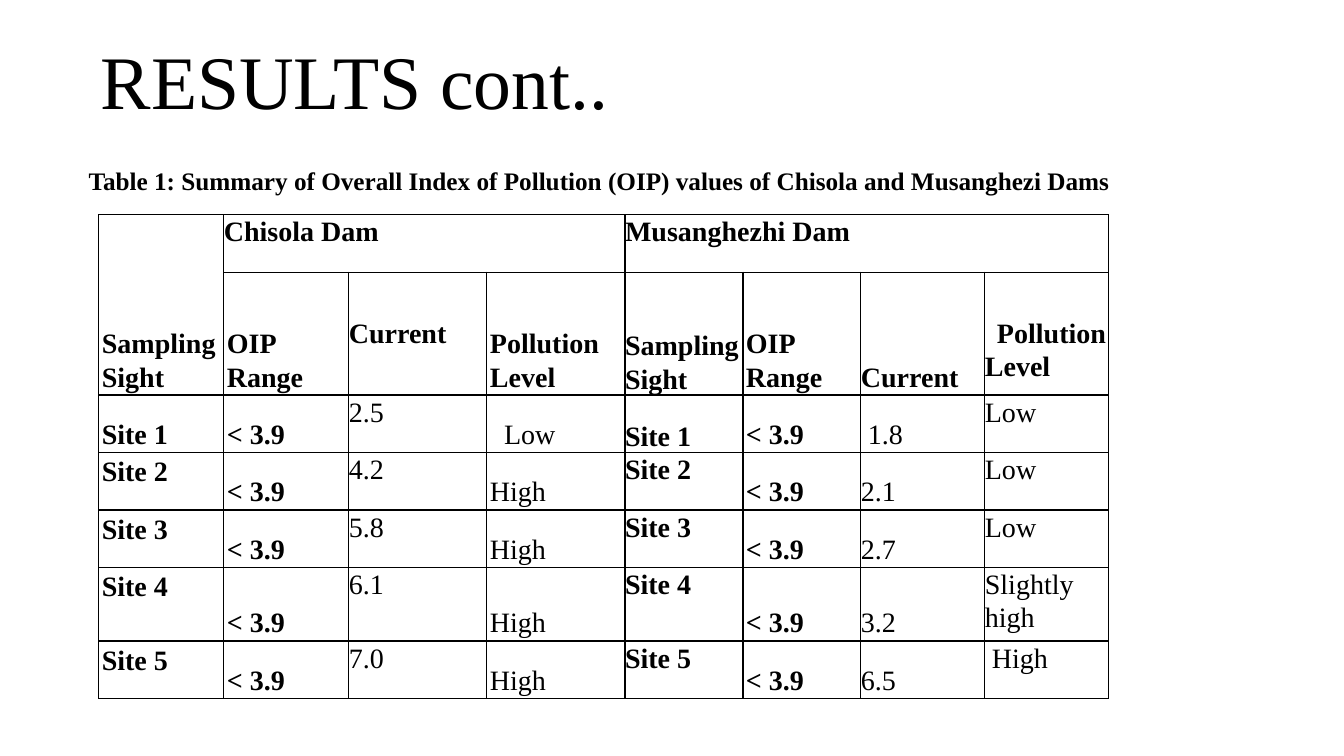
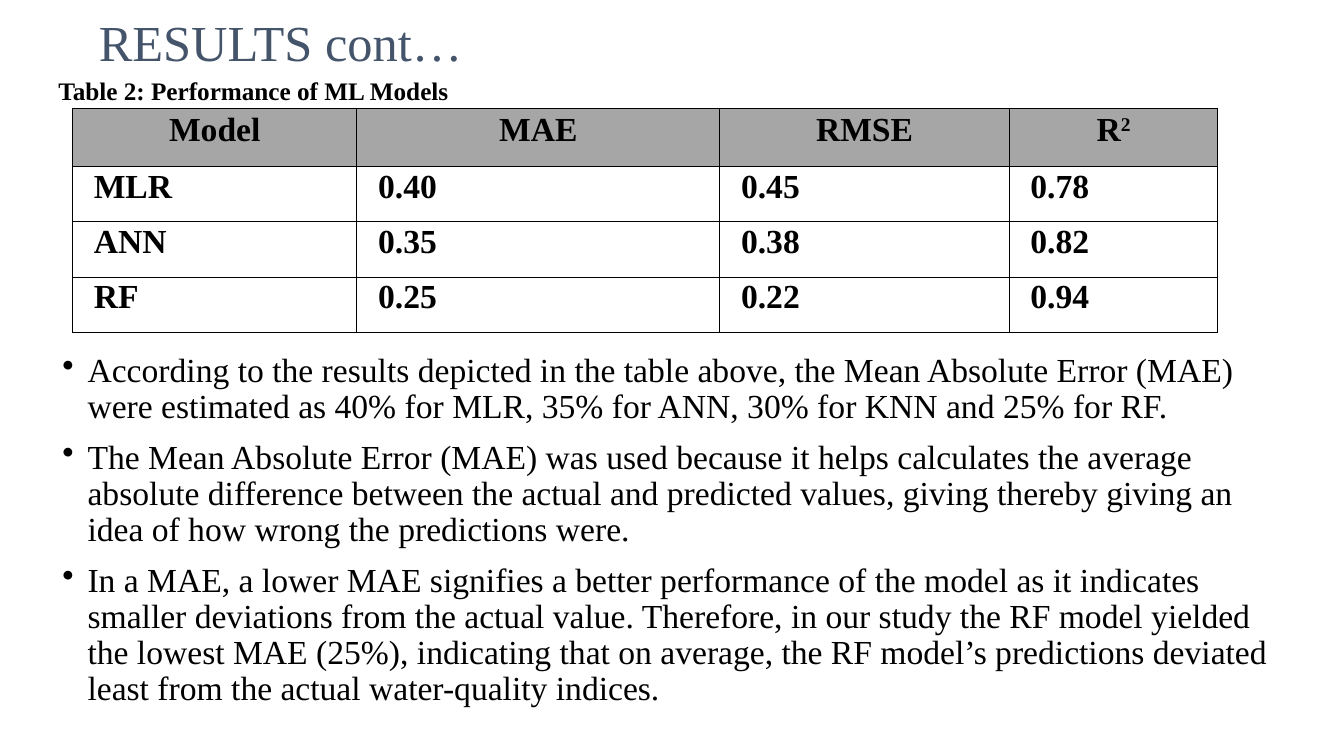
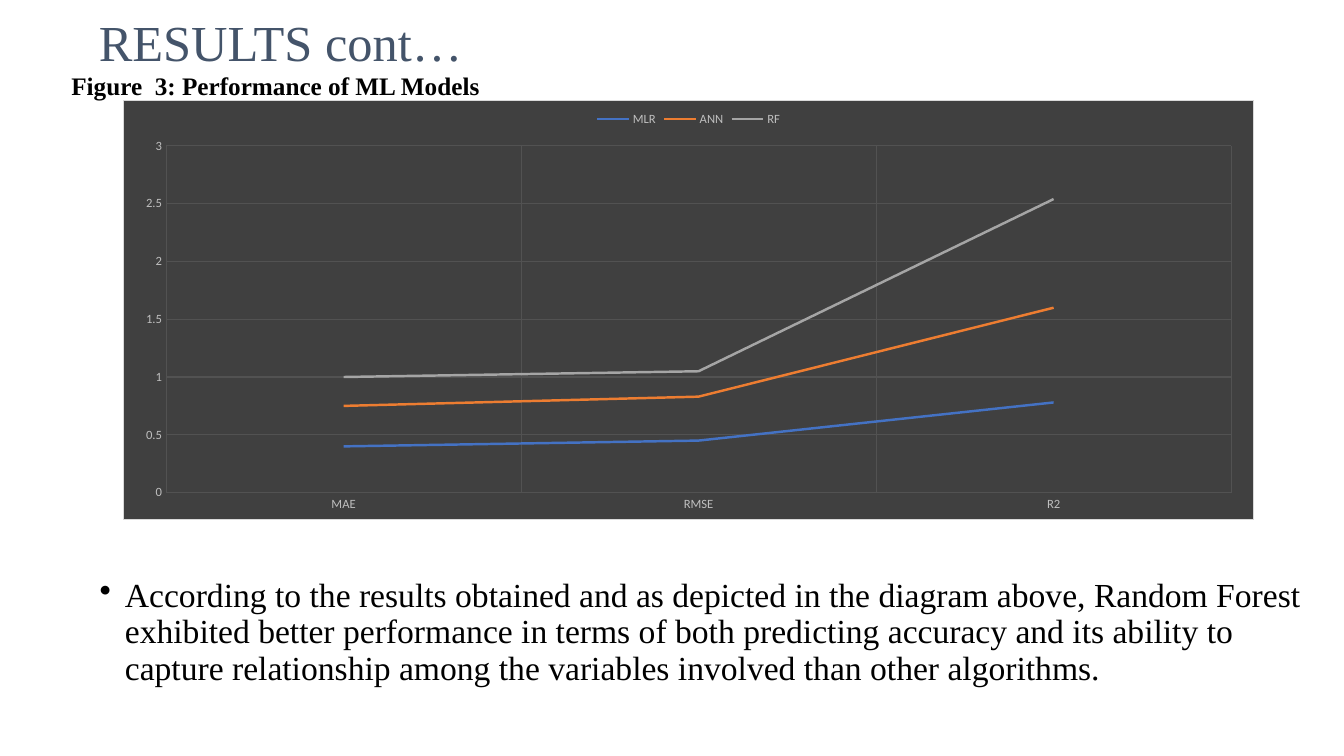
from lxml import etree
from pptx import Presentation
from pptx.chart.data import CategoryChartData
from pptx.dml.color import RGBColor
from pptx.enum.chart import XL_CHART_TYPE, XL_LEGEND_POSITION, XL_TICK_MARK
from pptx.enum.text import MSO_ANCHOR, PP_ALIGN
from pptx.oxml import parse_xml
from pptx.oxml.ns import nsdecls, qn
from pptx.util import Inches, Pt

LEFT, CENTER, JUSTIFY = PP_ALIGN.LEFT, PP_ALIGN.CENTER, PP_ALIGN.JUSTIFY
TOP, MIDDLE, BOTTOM = MSO_ANCHOR.TOP, MSO_ANCHOR.MIDDLE, MSO_ANCHOR.BOTTOM
LINE_STACKED = XL_CHART_TYPE.LINE_STACKED
LEGEND_TOP = XL_LEGEND_POSITION.TOP
NO_TICK = XL_TICK_MARK.NONE

BLACK = RGBColor(0x00, 0x00, 0x00)
SLATE = RGBColor(0x44, 0x54, 0x6A)
HEADER_GREY = RGBColor(0xA6, 0xA6, 0xA6)
CHART_GREY = RGBColor(0x40, 0x40, 0x40)
GRID_GREY = RGBColor(0x52, 0x52, 0x52)
LABEL_GREY = RGBColor(0xBF, 0xBF, 0xBF)
BORDER_GREY = RGBColor(0xD9, 0xD9, 0xD9)
BLUE = RGBColor(0x44, 0x72, 0xC4)
ORANGE = RGBColor(0xED, 0x7D, 0x31)
SILVER = RGBColor(0xA5, 0xA5, 0xA5)
TEXT_FONT = "Times New Roman"
CHART_FONT = "Calibri"


def write(paragraph, text, size, align=LEFT, bold=False, color=BLACK, spacing=1.07, indent=0):
    """Fill and format one paragraph; indent moves its first line, in inches."""
    paragraph.text = text
    paragraph.alignment = align
    paragraph.line_spacing = spacing
    paragraph.font.name = TEXT_FONT
    paragraph.font.size = Pt(size)
    paragraph.font.bold = bold
    paragraph.font.color.rgb = color
    if indent:
        paragraph._p.get_or_add_pPr().set("indent", str(Inches(indent)))


def add_ruled_table(slide, left, top, widths, heights):
    """Add an unfilled table with a 1 pt black line around every cell."""
    frame = slide.shapes.add_table(
        len(heights), len(widths), Inches(left), Inches(top),
        Inches(sum(widths)), Inches(sum(heights)))
    table = frame.table
    table.first_row = table.horz_banding = False
    for column, width in zip(table.columns, widths):
        column.width = Inches(width)
    for row, height in zip(table.rows, heights):
        row.height = Inches(height)
    for cell in table.iter_cells():
        properties = cell._tc.get_or_add_tcPr()
        for side in ("lnL", "lnR", "lnT", "lnB"):
            line = etree.SubElement(properties, qn(f"a:{side}"), w=str(Pt(1)))
            fill = etree.SubElement(line, qn("a:solidFill"))
            etree.SubElement(fill, qn("a:srgbClr"), val=str(BLACK))
        cell.fill.background()
    return table


presentation = Presentation()
presentation.slide_width = Inches(13.33)
presentation.slide_height = Inches(7.5)

# Titles and captions
SMALL_TITLE = ("RESULTS cont…", 36, SLATE, (0.88, -0.35, 5.44, 1.59))
HEADINGS = [
    (("RESULTS cont..", 54, BLACK, (0.9, 0.12, 11.5, 1.45)),
     "Table 1: Summary of Overall Index of Pollution (OIP) values of Chisola and Musanghezi Dams",
     (0.78, 1.57, 10.9, 0.41)),
    (SMALL_TITLE, "Table 2: Performance of ML Models", (0.48, 0.68, 6.67, 0.41)),
    (SMALL_TITLE, "Figure  3: Performance of ML Models", (0.61, 0.63, 6.67, 0.41)),
]
slides = []
for (title_text, title_size, title_color, title_box), caption_text, caption_box in HEADINGS:
    slide = presentation.slides.add_slide(presentation.slide_layouts[5])
    title = slide.shapes.title
    title.left, title.top, title.width, title.height = map(Inches, title_box)
    title.text_frame.vertical_anchor = MIDDLE
    write(title.text_frame.paragraphs[0], title_text, title_size, color=title_color, spacing=0.9)
    caption = slide.shapes.add_textbox(*map(Inches, caption_box))
    caption.text_frame.word_wrap = True
    write(caption.text_frame.paragraphs[0], caption_text, 18, JUSTIFY, bold=True)
    slides.append(slide)
pollution_slide, models_slide, chart_slide = slides

# Pollution table
POLLUTION_ROWS = [
    ["Sampling Sight", "Chisola Dam", "", "", "Musanghezhi Dam", "", "", ""],
    ["", "OIP Range", "Current", "Pollution Level",
     "Sampling Sight", "OIP Range", "Current", "Pollution Level"],
]
SITE_READINGS = [
    ("2.5", "Low", "1.8", "Low"),
    ("4.2", "High", "2.1", "Low"),
    ("5.8", "High", "2.7", "Low"),
    ("6.1", "High", "3.2", "Slightly high"),
    ("7.0", "High", "6.5", "High"),
]
for number, (chisola, chisola_level, musanghezhi, musanghezhi_level) in enumerate(SITE_READINGS, 1):
    site = [f"Site {number}", "< 3.9"]
    POLLUTION_ROWS.append(site + [chisola, chisola_level] + site + [musanghezhi, musanghezhi_level])
BOLD_COLUMNS = (0, 1, 4, 5)
SITE_COLUMNS = (0, 4)
TOP_COLUMNS = (2, 7)
SIDE_INSETS = [0.03, 0.03, 0, 0.03, 0, 0.03, 0, 0]
EDGE_INSETS = [0.02, 0.02, 0, 0.02, 0, 0.02, 0.02, 0]
FIRST_LINE_INDENTS = {(1, 7): 0.12, (2, 3): 0.14, (2, 6): 0.07, (6, 7): 0.07}

pollution_table = add_ruled_table(
    pollution_slide, 0.98, 2.13,
    [1.24, 1.24, 1.37, 1.37, 1.17, 1.17, 1.23, 1.23],
    [0.57, 1.22, 0.57, 0.57, 0.57, 0.73, 0.57])
for first, last in (((0, 0), (1, 0)), ((0, 1), (0, 3)), ((0, 4), (0, 7))):
    pollution_table.cell(*first).merge(pollution_table.cell(*last))
for row, texts in enumerate(POLLUTION_ROWS):
    for column, text in enumerate(texts):
        cell = pollution_table.cell(row, column)
        if cell.is_spanned:
            continue
        dam_heading = row == 0 and column > 0
        at_top = dam_heading or column in TOP_COLUMNS or (column in SITE_COLUMNS and row > 2)
        cell.vertical_anchor = TOP if at_top else BOTTOM
        cell.margin_left = cell.margin_right = Inches(0 if dam_heading else SIDE_INSETS[column])
        cell.margin_top = cell.margin_bottom = Inches(0 if dam_heading else EDGE_INSETS[column])
        if row == 1 and column in TOP_COLUMNS:
            cell.margin_top = Inches(0.44)
        write(cell.text_frame.paragraphs[0], text, 20, JUSTIFY,
              bold=row < 2 or column in BOLD_COLUMNS,
              indent=FIRST_LINE_INDENTS.get((row, column), 0))

# Model performance table
MODEL_ROWS = [
    ("Model", "MAE", "RMSE", "R"),
    ("MLR", "0.40", "0.45", "0.78"),
    ("ANN", "0.35", "0.38", "0.82"),
    ("RF", "0.25", "0.22", "0.94"),
]
model_table = add_ruled_table(
    models_slide, 0.72, 1.08, [2.82, 3.6, 2.87, 2.07], [0.57, 0.55, 0.55, 0.55])
for row, texts in enumerate(MODEL_ROWS):
    for column, text in enumerate(texts):
        cell = model_table.cell(row, column)
        cell.margin_left = cell.margin_right = Inches(0.07)
        cell.margin_top = cell.margin_bottom = 0
        paragraph = cell.text_frame.paragraphs[0]
        if row == 0:
            cell.fill.solid()
            cell.fill.fore_color.rgb = HEADER_GREY
            write(paragraph, text, 24, CENTER, bold=True)
        else:
            write(paragraph, text, 24, JUSTIFY, bold=True, spacing=1.05, indent=0.14)
exponent = model_table.cell(0, 3).text_frame.paragraphs[0].add_run()
exponent.text = "2"
exponent._r.get_or_add_rPr().set("baseline", "30000")

# Bulleted findings
FINDINGS = [
    (models_slide, (0.52, 3.46, 12.32, 3.7), [
        "According to the results depicted in the table above, the Mean Absolute Error (MAE) "
        "were estimated as 40% for MLR, 35% for ANN, 30% for KNN and 25% for RF.",
        "The Mean Absolute Error (MAE) was used because it helps calculates the average "
        "absolute difference between the actual and predicted values, giving thereby giving "
        "an idea of how wrong the predictions were.",
        "In a MAE, a lower MAE signifies a better performance of the model as it indicates "
        "smaller deviations from the actual value. Therefore, in our study the RF model "
        "yielded the lowest MAE (25%), indicating that on average, the RF model’s predictions "
        "deviated least from the actual water-quality indices.",
    ]),
    (chart_slide, (0.89, 5.69, 12.32, 1.3), [
        "According to the results obtained and as depicted in the diagram above, Random Forest "
        "exhibited better performance in terms of both predicting accuracy and its ability to "
        "capture relationship among the variables involved than other algorithms.",
    ]),
]
for slide, box, findings in FINDINGS:
    text_frame = slide.shapes.add_textbox(*map(Inches, box)).text_frame
    text_frame.word_wrap = True
    for index, finding in enumerate(findings):
        paragraph = text_frame.add_paragraph() if index else text_frame.paragraphs[0]
        write(paragraph, finding, 24, spacing=0.9, indent=-0.25)
        paragraph.space_after = Pt(10)
        properties = paragraph._p.get_or_add_pPr()
        properties.set("marL", str(Inches(0.25)))
        properties.find(qn("a:defRPr")).addprevious(
            parse_xml(f'<a:buChar {nsdecls("a")} char="•"/>'))

# Model performance chart
SERIES = [
    ("MLR", (0.4, 0.45, 0.78), BLUE),
    ("ANN", (0.35, 0.38, 0.82), ORANGE),
    ("RF", (0.25, 0.22, 0.94), SILVER),
]
chart_data = CategoryChartData()
chart_data.categories = ["MAE", "RMSE", "R2"]
for name, values, _ in SERIES:
    chart_data.add_series(name, values)
chart = chart_slide.shapes.add_chart(
    LINE_STACKED, Inches(1.22), Inches(0.99), Inches(11.22), Inches(4.17), chart_data).chart
chart.has_title = False
chart.font.name = CHART_FONT
chart.font.size = Pt(9)
chart.font.color.rgb = LABEL_GREY
chart.has_legend = True
chart.legend.position = LEGEND_TOP
chart.legend.include_in_layout = False
chart.plots[0].vary_by_categories = False
for series, (_, _, color) in zip(chart.plots[0].series, SERIES):
    series.smooth = False
    series.format.line.color.rgb = color
    series.format.line.width = Pt(1.75)
for axis in (chart.category_axis, chart.value_axis):
    axis.major_tick_mark = axis.minor_tick_mark = NO_TICK
    axis.format.line.fill.background()
    axis.has_major_gridlines = True
    axis.major_gridlines.format.line.color.rgb = GRID_GREY
    axis.major_gridlines.format.line.width = Pt(0.75)
chart.value_axis.minimum_scale = 0
chart.value_axis.maximum_scale = 3
chart.value_axis.major_unit = 0.5
chart._chartSpace.find(qn("c:txPr")).addprevious(parse_xml(
    f'<c:spPr {nsdecls("c", "a")}>'
    f'<a:solidFill><a:srgbClr val="{CHART_GREY}"/></a:solidFill>'
    f'<a:ln w="{Pt(0.75)}"><a:solidFill><a:srgbClr val="{BORDER_GREY}"/></a:solidFill></a:ln>'
    '</c:spPr>'))

presentation.save("out.pptx")
